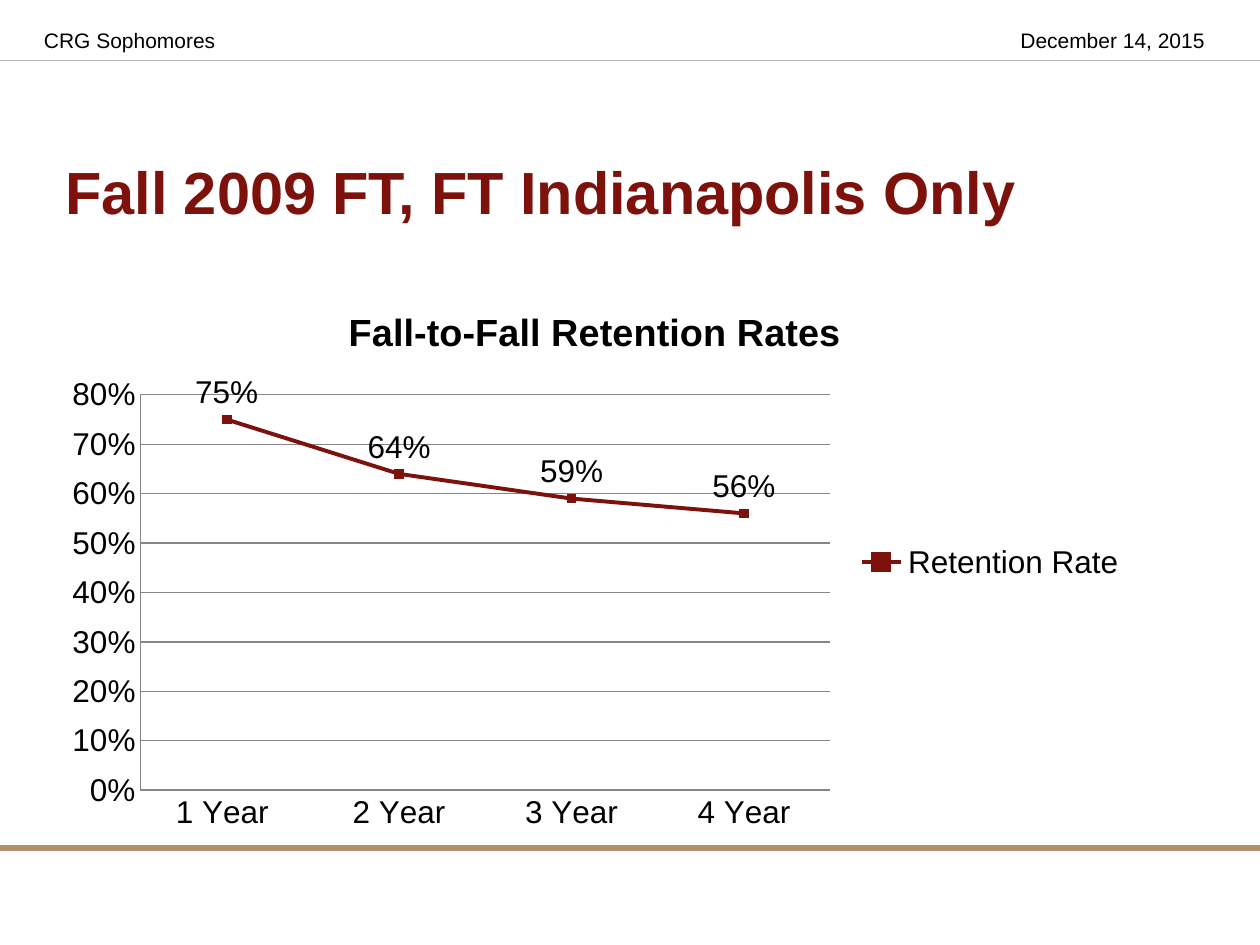
from dataclasses import dataclass

from lxml.etree import SubElement
from pptx import Presentation
from pptx.chart.data import CategoryChartData
from pptx.dml.color import RGBColor
from pptx.enum.chart import (XL_CHART_TYPE, XL_LABEL_POSITION,
                             XL_LEGEND_POSITION, XL_MARKER_STYLE, XL_TICK_MARK)
from pptx.enum.shapes import MSO_CONNECTOR
from pptx.enum.text import MSO_ANCHOR
from pptx.oxml import parse_xml
from pptx.oxml.ns import nsdecls, qn
from pptx.util import Inches, Pt


@dataclass(frozen=True)
class Theme:
    font: str = "Arial"
    black: RGBColor = RGBColor(0x00, 0x00, 0x00)
    maroon: RGBColor = RGBColor(0x7D, 0x11, 0x0C)
    silver: RGBColor = RGBColor(0xB0, 0xB2, 0xB4)
    gold: RGBColor = RGBColor(0xAF, 0x90, 0x6A)
    gray: RGBColor = RGBColor(0x86, 0x86, 0x86)
    title_size: float = 34
    chart_title_size: float = 21.6
    chart_size: float = 18
    header_size: float = 12


class Page:
    def __init__(self, deck, theme):
        self.deck = deck
        self.theme = theme
        self.slide = deck.slides.add_slide(deck.slide_layouts[6])

    def style(self, font, size, color, bold=False):
        font.name = self.theme.font
        font.size = Pt(size)
        font.bold = bold
        font.color.rgb = color

    def rule(self, top, color, weight):
        line = self.slide.shapes.add_connector(
            MSO_CONNECTOR.STRAIGHT, 0, Inches(top), self.deck.slide_width, Inches(top))
        line.line.color.rgb = color
        line.line.width = Pt(weight)
        SubElement(line._element.spPr, qn("a:effectLst"))

    def text(self, text, left, top, width, height, size, color,
             bold=False, anchor=MSO_ANCHOR.TOP):
        box = self.slide.shapes.add_textbox(
            Inches(left), Inches(top), Inches(width), Inches(height))
        frame = box.text_frame
        frame.word_wrap = True
        frame.vertical_anchor = anchor
        para = frame.paragraphs[0]
        para.text = text
        self.style(para.font, size, color, bold)

    def line_chart(self, title, name, rates, left, top, width, height, plot):
        theme = self.theme
        data = CategoryChartData(number_format="0%")
        data.categories = list(rates)
        data.add_series(name, list(rates.values()))
        chart = self.slide.shapes.add_chart(
            XL_CHART_TYPE.LINE_MARKERS, Inches(left), Inches(top),
            Inches(width), Inches(height), data).chart
        self.style(chart.font, theme.chart_size, theme.black)

        chart.has_title = True
        heading = chart.chart_title.text_frame.paragraphs[0]
        heading.text = title
        self.style(heading.font, theme.chart_title_size, theme.black, bold=True)

        chart.has_legend = True
        chart.legend.position = XL_LEGEND_POSITION.RIGHT
        chart.legend.include_in_layout = False

        for axis in (chart.category_axis, chart.value_axis):
            axis.major_tick_mark = axis.minor_tick_mark = XL_TICK_MARK.NONE
            axis.format.line.color.rgb = theme.gray
        values = chart.value_axis
        values.minimum_scale, values.maximum_scale, values.major_unit = 0, 0.8, 0.1
        values.tick_labels.number_format = "0%"
        values.tick_labels.number_format_is_linked = False
        values.major_gridlines.format.line.color.rgb = theme.gray

        chart.plots[0].vary_by_categories = False
        series = chart.plots[0].series[0]
        series.smooth = False
        series.format.line.color.rgb = theme.maroon
        series.format.line.width = Pt(2.25)
        series.marker.style = XL_MARKER_STYLE.SQUARE
        series.marker.size = 5
        series.marker.format.fill.solid()
        series.marker.format.fill.fore_color.rgb = theme.maroon
        series.marker.format.line.color.rgb = theme.maroon

        labels = series.data_labels
        labels.show_value = True
        labels.position = XL_LABEL_POSITION.ABOVE
        labels.number_format = "0%"
        labels.number_format_is_linked = False
        self.place_plot(chart, plot)

    def place_plot(self, chart, plot):
        area = chart._chartSpace.chart.plotArea
        for old in area.findall(qn("c:layout")):
            area.remove(old)
        sizes = "".join(f'<c:{key} val="{value}"/>' for key, value in zip("xywh", plot))
        area.insert(0, parse_xml(
            f'<c:layout {nsdecls("c")}><c:manualLayout><c:layoutTarget val="inner"/>'
            f'<c:xMode val="edge"/><c:yMode val="edge"/>{sizes}'
            '</c:manualLayout></c:layout>'))


def main():
    theme = Theme()
    deck = Presentation()
    deck.slide_width, deck.slide_height = Inches(10), Inches(7.5)
    page = Page(deck, theme)
    page.rule(0.48, theme.silver, 0.75)
    page.rule(6.73, theme.gold, 3.75)
    page.text("Fall 2009 FT, FT Indianapolis Only", 0.42, 0.89, 9.03, 1.25,
              theme.title_size, theme.maroon, bold=True, anchor=MSO_ANCHOR.MIDDLE)
    rates = {"1 Year ": 0.75, "2 Year": 0.64, "3 Year": 0.59, "4 Year": 0.56}
    page.line_chart("Fall-to-Fall Retention Rates ", "Retention Rate ", rates,
                    0.42, 2.25, 8.69, 4.42, plot=(0.08, 0.2, 0.63, 0.71))
    for text, left, width in (("December 14, 2015", 8, 1.75),
                              ("CRG Sophomores", 0.25, 5.42)):
        page.text(text, left, 0.17, width, 0.33, theme.header_size, theme.black)
    deck.save("out.pptx")


if __name__ == "__main__":
    main()
